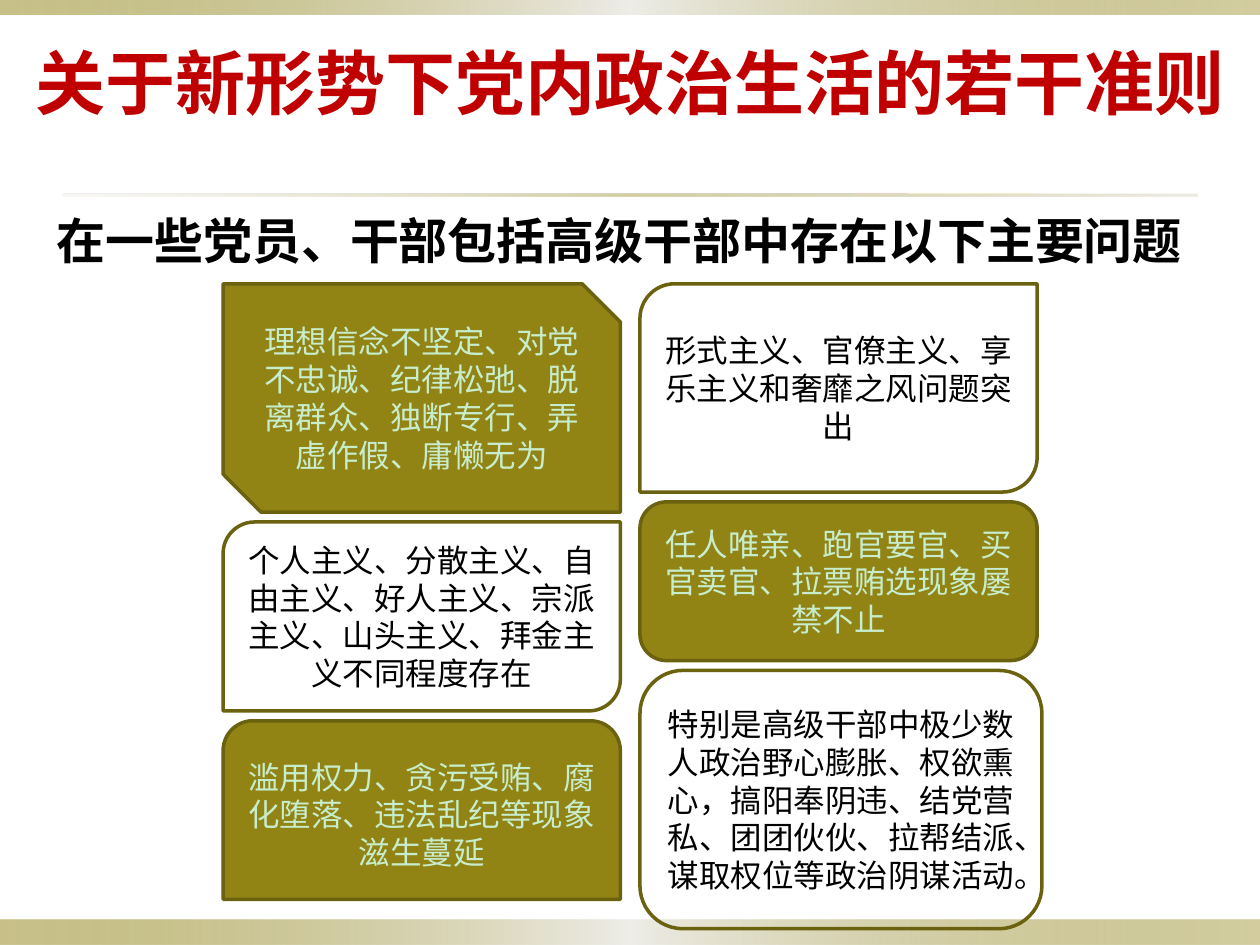
import pptx
import pptx.dml.color
import pptx.enum.shapes
import pptx.enum.text
import pptx.oxml
import pptx.oxml.ns
import pptx.util

Pt = pptx.util.Pt
SHAPE = pptx.enum.shapes.MSO_SHAPE
ALIGN = pptx.enum.text.PP_ALIGN
ANCHOR = pptx.enum.text.MSO_ANCHOR

OLIVE, DARK_OLIVE, MINT = "918415", "6B6210", "C7EDCC"
BLACK, RED, WHITE = "000000", "C00000", "FFFFFF"


def color(hex_value):
    return pptx.dml.color.RGBColor.from_string(hex_value)


class Deck:
    font = "Karla"
    body_size = 18
    line_width = 2

    def __init__(self, width, height):
        self.prs = pptx.Presentation()
        self.prs.slide_width, self.prs.slide_height = Pt(width), Pt(height)
        self.s = self.prs.slides.add_slide(self.prs.slide_layouts[6])
        self.s.background.fill.solid()
        self.s.background.fill.fore_color.rgb = color(WHITE)

    def set_text(self, sp, text, size, hex_value, font=None, bold=False, align=ALIGN.CENTER):
        tf = sp.text_frame
        tf.word_wrap = True
        tf.vertical_anchor = ANCHOR.MIDDLE
        p = tf.paragraphs[0]
        p.text, p.alignment = text, align
        p.font.name, p.font.size, p.font.bold = font or self.font, Pt(size), bold
        p.font.color.rgb = color(hex_value)
        return tf

    def text(self, x, y, w, h, text, size, hex_value, **style):
        sp = self.s.shapes.add_textbox(Pt(x), Pt(y), Pt(w), Pt(h))
        return self.set_text(sp, text, size, hex_value, **style)

    def shape(self, kind, x, y, w, h):
        sp = self.s.shapes.add_shape(kind, Pt(x), Pt(y), Pt(w), Pt(h))
        sp.shadow.inherit = False
        return sp

    def band(self, x, y, w, h, stops):
        """Rectangle with a horizontal gradient of (position, colour, opacity) in percent."""
        sp = self.shape(SHAPE.RECTANGLE, x, y, w, h)
        sp.line.fill.background()
        stop_xml = "".join(
            f'<a:gs pos="{pos * 1000}"><a:srgbClr val="{c}">'
            f'<a:alpha val="{alpha * 1000}"/></a:srgbClr></a:gs>'
            for pos, c, alpha in stops)
        grad = pptx.oxml.parse_xml(
            f'<a:gradFill {pptx.oxml.ns.nsdecls("a")} rotWithShape="1">'
            f'<a:gsLst>{stop_xml}</a:gsLst><a:lin ang="0" scaled="0"/></a:gradFill>')
        sp._element.spPr.find(pptx.oxml.ns.qn("a:prstGeom")).addnext(grad)

    def card(self, kind, x, y, w, h, text, filled):
        sp = self.shape(kind, x, y, w, h)
        if filled:
            sp.fill.solid()
            sp.fill.fore_color.rgb = color(OLIVE)
        else:
            sp.fill.background()
        sp.line.color.rgb = color(DARK_OLIVE)
        sp.line.width = Pt(self.line_width)
        self.set_text(sp, text, self.body_size, MINT if filled else BLACK)


def main():
    deck = Deck(720, 540)

    # Edge bands and the rule under the title
    edge = [(0, OLIVE, 50), (50, "EEEDE8", 100), (100, OLIVE, 40)]
    deck.band(0, 525.6, 720, 14.4, edge)
    deck.band(0, 0, 720, 8.6, edge)
    deck.band(36, 110.9, 648, 1.4,
              [(0, "DCD9CC", 20), (50, OLIVE, 40), (100, "DCD9CC", 50)])

    # Title and subtitle
    deck.text(0, 15.1, 720, 62.6, "关于新形势下党内政治生活的若干准则",
              40, RED, font="Arial", bold=True)
    tf = deck.text(25.2, 116.6, 667.4, 41, "在一些党员、干部包括高级干部中存在以下主要问题",
                   28, BLACK, bold=True, align=ALIGN.LEFT)
    tf.word_wrap = False
    tf.vertical_anchor = ANCHOR.TOP

    # Two columns of cards: shape, width, height, filled, text
    columns = {
        127.5: [
            (SHAPE.SNIP_2_DIAG_RECTANGLE, 227, 130.5, True,
             "理想信念不坚定、对党不忠诚、纪律松弛、脱离群众、独断专行、弄虚作假、庸懒无为"),
            (SHAPE.ROUND_2_DIAG_RECTANGLE, 227, 108, False,
             "个人主义、分散主义、自由主义、好人主义、宗派主义、山头主义、拜金主义不同程度存在"),
            (SHAPE.ROUND_2_SAME_RECTANGLE, 227, 102, True,
             "滥用权力、贪污受贿、腐化堕落、违法乱纪等现象滋生蔓延"),
        ],
        365.7: [
            (SHAPE.ROUND_2_DIAG_RECTANGLE, 227, 119, False,
             "形式主义、官僚主义、享乐主义和奢靡之风问题突出"),
            (SHAPE.ROUNDED_RECTANGLE, 227, 90.7, True,
             "任人唯亲、跑官要官、买官卖官、拉票贿选现象屡禁不止"),
            (SHAPE.ROUNDED_RECTANGLE, 229.7, 147.6, False,
             "特别是高级干部中极少数人政治野心膨胀、权欲熏心，搞阳奉阴违、结党营私、"
             "团团伙伙、拉帮结派、谋取权位等政治阴谋活动。"),
        ],
    }
    top, gap = 162.2, 5.6
    for x, cards in columns.items():
        y = top
        for kind, w, h, filled, text in cards:
            deck.card(kind, x, y, w, h, text, filled)
            y += h + gap

    deck.prs.save("out.pptx")


if __name__ == "__main__":
    main()
